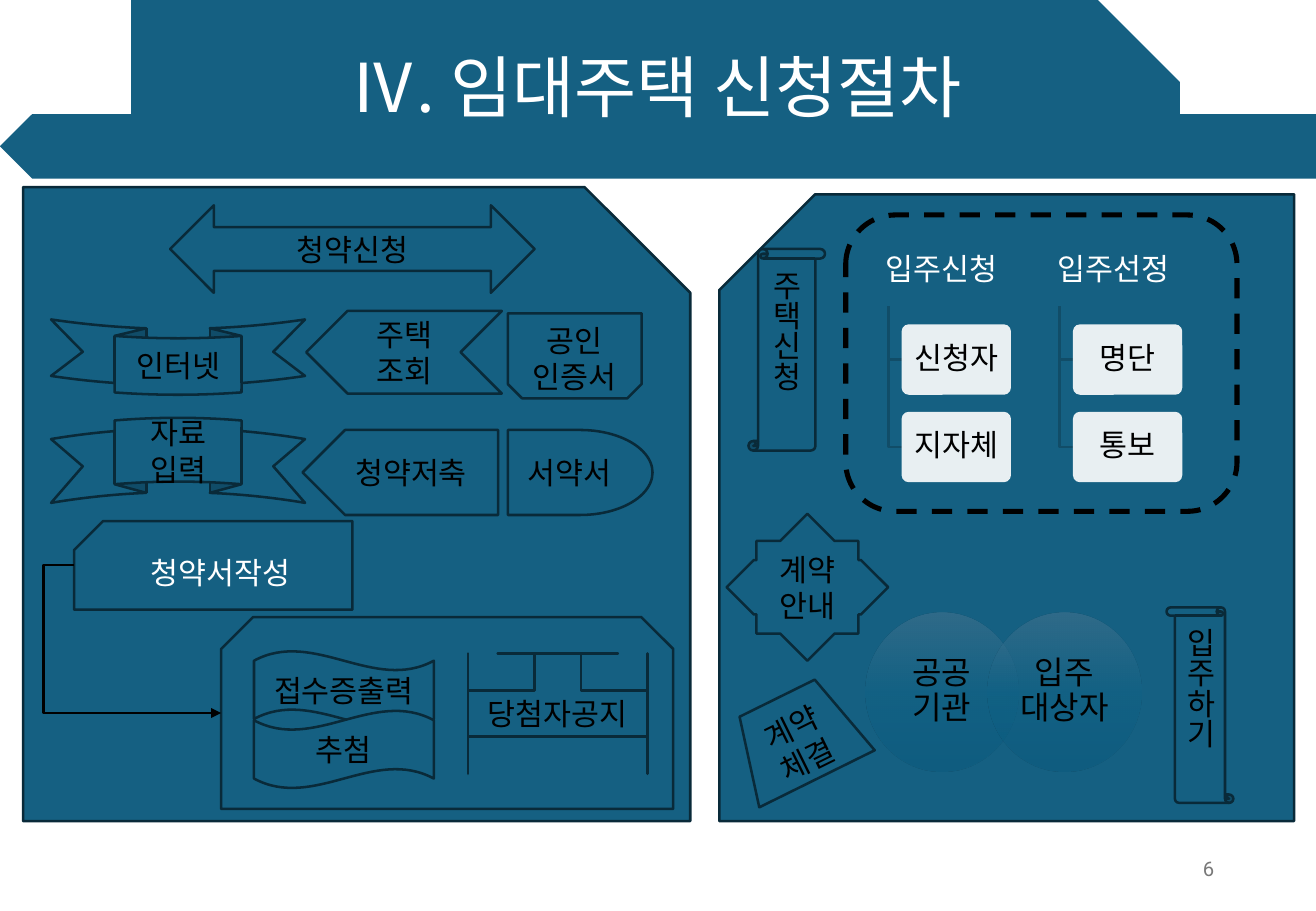
from pptx import Presentation
from pptx.dml.color import RGBColor
from pptx.enum.dml import MSO_LINE
from pptx.enum.shapes import MSO_CONNECTOR, MSO_SHAPE as S
from pptx.enum.text import MSO_ANCHOR, MSO_AUTO_SIZE, PP_ALIGN
from pptx.oxml import parse_xml
from pptx.oxml.ns import nsdecls, qn
from pptx.util import Inches, Pt
from lxml.etree import SubElement

TEAL, EDGE, BRANCH = "156082", "092A39", "114D68"
BLACK, WHITE, GREY = "000000", "FFFFFF", "797979"
KOREAN, LATIN = "Noto Sans CJK KR", "Roboto"

# Content: kind, (left, top, width, height), text, options
TITLE = "Ⅳ. 임대주택 신청절차"
PAGE = "6"
BANNER = [
    (S.PENTAGON, (0, 0.94, 10.83, 0.53), "", {"flip": "flipH", "edge": None}),
    (S.SNIP_1_RECTANGLE, (1.08, -0.06, 8.63, 1.47), "", {"adj": [0.5], "edge": None}),
]
SUBSCRIPTION = [
    (S.SNIP_1_RECTANGLE, (0.19, 1.54, 5.49, 5.22), "", {}),
    (S.SNIP_2_SAME_RECTANGLE, (1.82, 5.08, 3.72, 1.58), "", {}),
    (S.LEFT_RIGHT_ARROW, (1.4, 1.69, 3, 0.72), "청약신청", {}),
    (S.CURVED_UP_RIBBON, (0.42, 3.44, 2.09, 0.7), "자료\n입력", {}),
    (S.CURVED_DOWN_RIBBON, (0.42, 2.63, 2.09, 0.62), "인터넷", {}),
    (S.PENTAGON, (2.49, 3.54, 1.61, 0.7), "청약저축", {"flip": "flipH"}),
    (S.CHEVRON, (2.52, 2.56, 1.61, 0.68), "주택\n조회", {"flip": "flipH"}),
    (S.SNIP_2_SAME_RECTANGLE, (4.18, 2.58, 1.1, 0.7), "", {"flip": "flipV"}),
    (S.FLOWCHART_DELAY, (4.18, 3.54, 1.19, 0.7), "서약서", {}),
    (S.SNIP_1_RECTANGLE, (0.61, 4.29, 2.29, 0.73), "청약서작성",
     {"flip": "flipH", "adj": [0.327], "color": WHITE}),
    (S.WAVE, (2.09, 5.36, 1.48, 0.64), "접수증출력", {}),
    (S.WAVE, (2.09, 5.85, 1.48, 0.64), "추첨", {"flip": "flipH"}),
    (S.LEFT_RIGHT_UP_ARROW, (3.85, 5.38, 1.48, 0.99), "당첨자공지",
     {"adj": [0.383, 0.5, 0.25]}),
]
CERTIFICATE = ("공인\n인증서", (4.18, 2.6, 1.1, 0.71))
MOVE_IN = [
    (S.SNIP_1_RECTANGLE, (5.92, 1.6, 4.73, 5.16), "", {"flip": "flipH"}),
    (S.VERTICAL_SCROLL, (6.16, 2.05, 0.63, 1.66), "주택신청", {"vert": "eaVert"}),
    (S.TRAPEZOID, (6.03, 5.71, 1.06, 0.74), "계약\n체결", {"rotation": 333.7}),
    (S.VERTICAL_SCROLL, (9.6, 5, 0.55, 1.61), "입주하기",
     {"flip": "flipH", "vert": "eaVert"}),
    (S.QUAD_ARROW_CALLOUT, (5.98, 4.23, 1.33, 1.21), "계약\n안내",
     {"adj": [0.37, 0.185, 0.185, 0.63]}),
]
PARTIES = ["공공\n기관", "입주\n대상자"]
HAZE = [(0, "4C7591"), (50, "106287"), (100, "09597D")]
STEPS = [("입주신청", ["신청자", "지자체"]), ("입주선정", ["명단", "통보"])]

prs = Presentation()
prs.slide_width, prs.slide_height = Inches(10.83), Inches(7.5)
slide = prs.slides.add_slide(prs.slide_layouts[5])
shapes = slide.shapes


def rgb(value):
    return RGBColor.from_string(value)


def inches(box):
    return [Inches(v) for v in box]


def write(shape, text, color=BLACK, size=18, font=KOREAN, align=PP_ALIGN.CENTER,
          anchor=MSO_ANCHOR.MIDDLE, spacing=1.0, inset=(0.1, 0.05), vert=None):
    frame = shape.text_frame
    side, edge = inches(inset)
    frame_format = {"word_wrap": True, "vertical_anchor": anchor, "margin_left": side,
                    "margin_right": side, "margin_top": edge, "margin_bottom": edge}
    for key, value in frame_format.items():
        setattr(frame, key, value)
    if vert:
        frame._txBody.bodyPr.set("vert", vert)
    paragraph = frame.paragraphs[0]
    paragraph.text = text
    paragraph.alignment, paragraph.line_spacing = align, spacing
    for run in paragraph.runs:
        for key, value in {"size": Pt(size), "name": font, "bold": False}.items():
            setattr(run.font, key, value)
        run.font.color.rgb = rgb(color)
        SubElement(run._r.get_or_add_rPr(), qn("a:ea")).set("typeface", KOREAN)


def outline(shape, color, width=1.5):
    if color is None:
        shape.line.fill.background()
    else:
        shape.line.color.rgb = rgb(color)
        shape.line.width = Pt(width)


def draw(kind, box, text="", fill=TEAL, edge=EDGE, flip=None, adj=(), rotation=0, **style):
    shape = shapes.add_shape(kind, *inches(box))
    shape.shadow.inherit = False
    shape.rotation = rotation
    for i, value in enumerate(adj):
        shape.adjustments[i] = value
    if flip:
        shape._element.spPr.xfrm.set(flip, "1")
    if fill:
        shape.fill.solid()
        shape.fill.fore_color.rgb = rgb(fill)
    else:
        shape.fill.background()
    outline(shape, edge)
    if text:
        write(shape, text, **style)
    return shape


def draw_all(parts):
    for kind, box, text, options in parts:
        draw(kind, box, text, **options)


# Banner and title
draw_all(BANNER)
title = shapes.title
title.left, title.top, title.width, title.height = inches((1.08, 0.02, 8.63, 1.45))
write(title, TITLE, color=WHITE, size=40, spacing=0.9)
shapes._spTree.append(title._element)

page = shapes.add_textbox(*inches((7.65, 6.95, 2.44, 0.4)))
write(page, PAGE, color=GREY, size=12, font=LATIN, align=PP_ALIGN.RIGHT)

# Left panel: subscription
draw_all(SUBSCRIPTION)
certificate = shapes.add_textbox(*inches(CERTIFICATE[1]))
write(certificate, CERTIFICATE[0], anchor=MSO_ANCHOR.TOP)
certificate.text_frame.auto_size = MSO_AUTO_SIZE.SHAPE_TO_FIT_TEXT

# Arrow from the application form to the draw
arrow = shapes.add_connector(MSO_CONNECTOR.ELBOW, *inches((0.61, 4.65, 1.82, 5.87)))
outline(arrow, BLACK)
SubElement(arrow.line._get_or_add_ln(), qn("a:tailEnd")).set("type", "triangle")
arrow_props = arrow._element.spPr
SubElement(arrow_props, qn("a:effectLst"))
bend = SubElement(arrow_props.find(qn("a:prstGeom")).find(qn("a:avLst")), qn("a:gd"))
bend.set("name", "adj1")
bend.set("fmla", "val -20700")

# Right panel: contract and moving in
draw_all(MOVE_IN)

# Overlapping circles of the two parties
for i, party in enumerate(PARTIES):
    circle = draw(S.OVAL, (7.12 + 1.01 * i, 5.04, 1.26, 1.31), party, edge=None,
                  size=19, font=LATIN, spacing=0.9, inset=(0.07, 0.03))
    stops = "".join(
        f'<a:gs pos="{pos * 1000}"><a:srgbClr val="{color}"><a:alpha val="50000"/>'
        f'</a:srgbClr></a:gs>' for pos, color in HAZE)
    haze = parse_xml(f'<a:gradFill {nsdecls("a")}><a:gsLst>{stops}</a:gsLst>'
                     f'<a:lin ang="5400000" scaled="0"/></a:gradFill>')
    circle_props = circle._element.spPr
    circle_props.replace(circle_props.find(qn("a:solidFill")), haze)

# Step columns with their branches
CARD = {"edge": None, "adj": [0.1], "spacing": 0.9, "inset": (0.04, 0.03)}
for col, (step, items) in enumerate(STEPS):
    left = 7.19 + 1.41 * col
    draw(S.ROUNDED_RECTANGLE, (left, 1.94, 1.12, 0.58), step, color=WHITE, **CARD)
    for row, item in enumerate(items):
        top = 2.67 + 0.72 * row
        middle = Inches(top + 0.29)
        stem, card_left = Inches(left + 0.12), Inches(left + 0.23)
        path_builder = shapes.build_freeform(stem, Inches(2.52))
        path_builder.add_line_segments([(stem, middle), (card_left, middle)], close=False)
        branch = path_builder.convert_to_shape()
        branch.shadow.inherit = False
        branch.fill.background()
        outline(branch, BRANCH)
        card = draw(S.ROUNDED_RECTANGLE, (left + 0.23, top, 0.9, 0.58), item,
                    fill=WHITE, **CARD)
        card_color = card._element.spPr.find(qn("a:solidFill"))[0]
        SubElement(card_color, qn("a:alpha")).set("val", "90000")

# Dashed frame around the steps
frame_box = draw(S.ROUNDED_RECTANGLE, (6.96, 1.77, 3.22, 2.44), fill=None, edge=BLACK)
frame_box.line.width = Pt(3)
frame_box.line.dash_style = MSO_LINE.DASH

prs.save("out.pptx")
